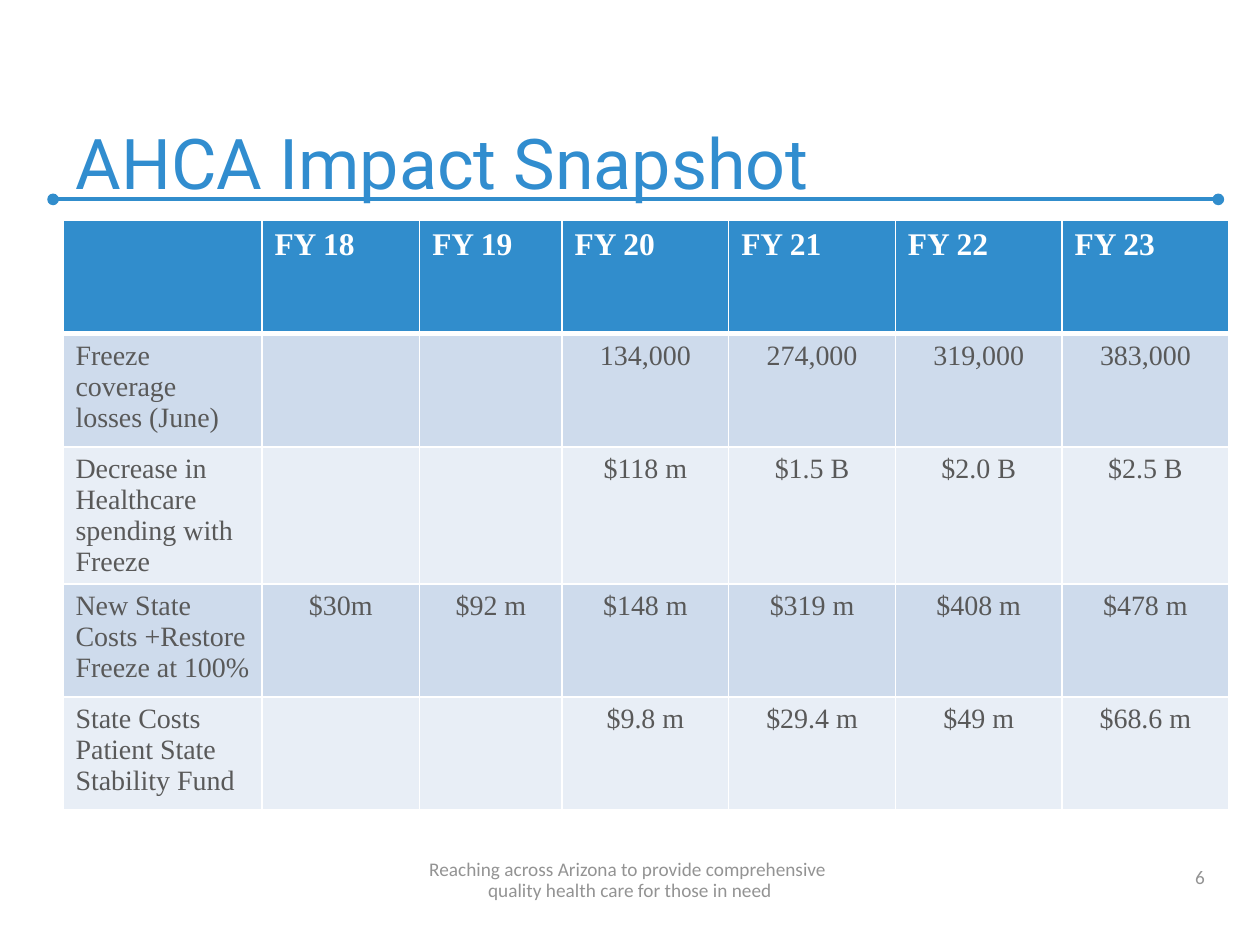
from lxml.etree import SubElement
from pptx import Presentation
from pptx.dml.color import RGBColor
from pptx.enum.shapes import MSO_CONNECTOR
from pptx.enum.text import MSO_ANCHOR, MSO_AUTO_SIZE, PP_ALIGN as Align
from pptx.oxml.ns import qn
from pptx.util import Cm, Pt

TITLE_BLUE = RGBColor(0x31, 0x8D, 0xCF)
BLUE = RGBColor(0x31, 0x8D, 0xCC)
BAND_DARK = RGBColor(0xCE, 0xDB, 0xEC)
BAND_LIGHT = RGBColor(0xE8, 0xEE, 0xF6)
WHITE = RGBColor(0xFF, 0xFF, 0xFF)
TEXT_GRAY = RGBColor(0x59, 0x59, 0x59)
FOOTER_GRAY = RGBColor(0x93, 0x93, 0x93)

COLUMN_WIDTHS = [4.01, 3.18, 2.87] + [3.36] * 4
ROW_HEIGHT = 2.28
ROWS = [
    ["", "FY 18", "FY 19", "FY 20", "FY 21", "FY 22", "FY 23"],
    ["Freeze coverage losses (June)", "", "",
     "134,000", "274,000", "319,000", "383,000"],
    ["Decrease in Healthcare spending with Freeze", "", "",
     "$118 m", "$1.5 B", "$2.0 B", "$2.5 B"],
    ["New State Costs +Restore Freeze at 100%", "$30m", "$92 m",
     "$148 m", "$319 m", "$408 m", "$478 m"],
    ["State Costs Patient State Stability Fund", "", "",
     "$9.8 m", "$29.4 m", "$49 m", "$68.6 m"],
]


def write_text(text_frame, text, font, size, color, bold=False,
               align=Align.LEFT, line_spacing=None):
    """Fill the first paragraph; a vertical tab makes a line break."""
    paragraph = text_frame.paragraphs[0]
    paragraph.text = text
    paragraph.alignment = align
    if line_spacing:
        paragraph.line_spacing = line_spacing
    paragraph.font.name = font
    paragraph.font.size = Pt(size)
    paragraph.font.bold = bold
    paragraph.font.color.rgb = color


def place_title(slide, text):
    title = slide.shapes.title
    title.left, title.top = Cm(1.27), Cm(0.84)
    title.width, title.height = Cm(23.06), Cm(3.38)
    title.text_frame.auto_size = MSO_AUTO_SIZE.NONE
    title.text_frame.vertical_anchor = MSO_ANCHOR.BOTTOM
    write_text(title.text_frame, text, "Roboto", 40, TITLE_BLUE)


def add_title_rule(slide):
    rule = slide.shapes.add_connector(
        MSO_CONNECTOR.STRAIGHT, Cm(1.07), Cm(4.02), Cm(24.56), Cm(4.02))
    rule.line.color.rgb = BLUE
    rule.line.width = Pt(2.25)
    line = rule.line._get_or_add_ln()
    for end in ("a:headEnd", "a:tailEnd"):
        SubElement(line, qn(end), type="oval")
    SubElement(rule._element.spPr, qn("a:effectLst"))
    # Keep the rule behind the title
    slide.shapes._spTree.insert(2, rule._element)


def set_borders(cell, **widths):
    properties = cell._tc.get_or_add_tcPr()
    for side in "LRTB":
        line = SubElement(properties, qn(f"a:ln{side}"),
                          w=str(Pt(widths.get(side, 1))))
        fill = SubElement(line, qn("a:solidFill"))
        SubElement(fill, qn("a:srgbClr"), val=str(WHITE))


def format_cell(cell, text, row, column):
    if row == 0:
        set_borders(cell, B=3)
        fill, style = BLUE, dict(size=18, color=WHITE, bold=True)
    else:
        set_borders(cell, T=3 if row == 1 else 1)
        fill = BAND_DARK if row % 2 else BAND_LIGHT
        style = dict(size=16, color=TEXT_GRAY,
                     align=Align.CENTER if column else Align.LEFT)
    cell.fill.solid()
    cell.fill.fore_color.rgb = fill
    write_text(cell.text_frame, text, "Times New Roman", **style)


def add_impact_table(slide):
    table = slide.shapes.add_table(
        len(ROWS), len(COLUMN_WIDTHS), Cm(1.27), Cm(4.45),
        Cm(sum(COLUMN_WIDTHS)), Cm(ROW_HEIGHT * len(ROWS))).table
    for column, width in zip(table.columns, COLUMN_WIDTHS):
        column.width = Cm(width)
    for row, texts in enumerate(ROWS):
        table.rows[row].height = Cm(ROW_HEIGHT)
        for column, text in enumerate(texts):
            format_cell(table.cell(row, column), text, row, column)


def add_footer_text(slide, text, left, width, height, **style):
    box = slide.shapes.add_textbox(Cm(left), Cm(17.22), Cm(width), Cm(height))
    box.text_frame.word_wrap = True
    box.text_frame.vertical_anchor = MSO_ANCHOR.BOTTOM
    write_text(box.text_frame, text, "Calibri", 11, FOOTER_GRAY, **style)


def main():
    presentation = Presentation()
    presentation.slide_width, presentation.slide_height = Cm(25.4), Cm(19.05)
    slide = presentation.slides.add_slide(presentation.slide_layouts[5])

    # Heading
    place_title(slide, "AHCA Impact Snapshot")
    add_title_rule(slide)

    # Yearly figures
    add_impact_table(slide)

    # Slide number and motto
    add_footer_text(slide, "6", 18.62, 5.92, 0.81, align=Align.RIGHT)
    add_footer_text(slide, "Reaching across Arizona to provide comprehensive \v"
                    "quality health care for those in need",
                    0, 25.4, 1.07, align=Align.CENTER, line_spacing=Pt(12))

    presentation.save("out.pptx")


if __name__ == "__main__":
    main()
